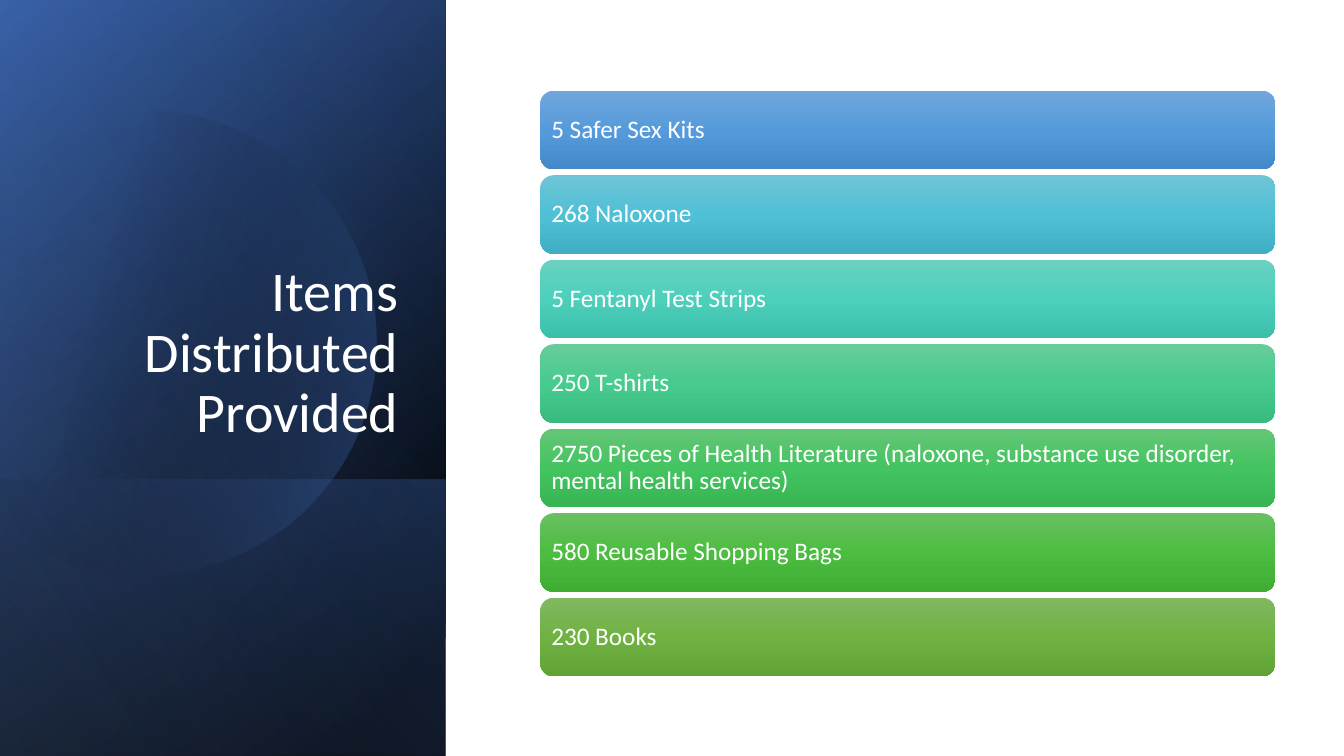
import math

import pptx
import pptx.dml.color
import pptx.enum.shapes
import pptx.enum.text
import pptx.oxml
import pptx.oxml.ns
import pptx.util

PX = 9144  # EMU per px, 100 px to the inch
ALIGN = pptx.enum.text.PP_ALIGN
ANCHOR = pptx.enum.text.MSO_ANCHOR
SHAPE = pptx.enum.shapes.MSO_SHAPE


class Theme:
    font = "Calibri"
    title_size, item_size = 40, 18
    text = "FFFFFF"
    # Gradient stops: position %, colour, opacity %
    panel_base = [(8, "000000", 100), (100, "2F5597", 100)]
    panel_tint = [(0, "000000", 0), (99, "4472C4", 46)]
    panel_foot = [(2, "4472C4", 29), (100, "000000", 30)]
    panel_disc = [(29, "000000", 0), (100, "4472C4", 43)]
    panel_sheen = [(0, "000000", 0), (99, "8FAADC", 11)]
    # Top, middle and bottom colour of each bar
    bars = [
        ("71A6DB", "559BDB", "448ACA"),
        ("6EC4D6", "50C0D6", "40AFC5"),
        ("6AD1C0", "4CD0BC", "3CC0AC"),
        ("67CC9A", "47CB8E", "39BB7F"),
        ("64C677", "44C460", "36B552"),
        ("69C062", "4CBD41", "3FAD34"),
        ("81B861", "6FB242", "62A336"),
    ]


TITLE = "Items Distributed Provided"
ITEMS = [
    "5 Safer Sex Kits",
    "268 Naloxone",
    "5 Fentanyl Test Strips",
    "250 T-shirts",
    "2750 Pieces of Health Literature (naloxone, substance use disorder, "
    "mental health services)",
    "580 Reusable Shopping Bags",
    "230 Books",
]


def emu(*lengths):
    return [round(length * PX) for length in lengths]


def style_gradient(sp, stops, angle):
    """Give a shape a linear gradient, clockwise angle, no line or shadow."""
    sp.shadow.inherit = False
    sp.line.fill.background()
    gs = "".join(
        f'<a:gs pos="{pos * 1000}"><a:srgbClr val="{color}">'
        f'<a:alpha val="{alpha * 1000}"/></a:srgbClr></a:gs>'
        for pos, color, alpha in stops
    )
    fill = pptx.oxml.parse_xml(
        f'<a:gradFill {pptx.oxml.ns.nsdecls("a")}><a:gsLst>{gs}</a:gsLst>'
        f'<a:lin ang="{angle * 60000}" scaled="0"/></a:gradFill>'
    )
    sp.fill.background()
    props = sp._element.spPr
    no_fill = props.find(pptx.oxml.ns.qn("a:noFill"))
    props.replace(no_fill, fill)


def write_text(sp, text, size, align=ALIGN.LEFT, anchor=ANCHOR.MIDDLE, inset=(10, 5)):
    tf = sp.text_frame
    tf.word_wrap = True
    tf.vertical_anchor = anchor
    tf.margin_left = tf.margin_right = emu(inset[0])[0]
    tf.margin_top = tf.margin_bottom = emu(inset[1])[0]
    p = tf.paragraphs[0]
    p.alignment = align
    p.line_spacing = 0.9
    r = p.add_run()
    r.text = text
    r.font.name = Theme.font
    r.font.size = pptx.util.Pt(size)
    r.font.color.rgb = pptx.dml.color.RGBColor.from_string(Theme.text)


def add_turned_rect(slide, x, y, w, h, stops, angle):
    """Cover the given box with a mirrored rectangle turned by 90 degrees."""
    left, top = x + (w - h) / 2, y + (h - w) / 2
    sp = slide.shapes.add_shape(SHAPE.RECTANGLE, *emu(left, top, h, w))
    sp.rotation = 90
    sp._element.spPr.find(pptx.oxml.ns.qn("a:xfrm")).set("flipH", "1")
    style_gradient(sp, stops, angle)


def add_disc(slide, x, cx, cy, radius):
    """Draw a disc cut off by the vertical edge at x."""
    reach = math.acos((x - cx) / radius)
    steps = 120
    angles = [reach * (2 * i / steps - 1) for i in range(steps + 1)]
    points = [emu(cx + radius * math.cos(a), cy + radius * math.sin(a)) for a in angles]
    builder = slide.shapes.build_freeform(*points[0])
    builder.add_line_segments(points[1:], close=True)
    style_gradient(builder.convert_to_shape(), Theme.panel_disc, 14)


def add_title_panel(slide, x, y, w, h):
    # Layered background
    foot = 274
    add_turned_rect(slide, x, y, w, h, Theme.panel_base, 50)
    add_turned_rect(slide, x, y, w, h, Theme.panel_tint, 30)
    add_turned_rect(slide, x, y + h - foot, w, foot, Theme.panel_foot, 130)
    add_disc(slide, x, x + 143, y + 340, 230)
    add_turned_rect(slide, x, y, w, h, Theme.panel_sheen, 120)

    # Title
    sp = slide.shapes.add_textbox(*emu(x + 64, y + 184, 341, 262))
    write_text(sp, TITLE, Theme.title_size, align=ALIGN.RIGHT, anchor=ANCHOR.BOTTOM)


def add_item_bars(slide, x, y, w, h):
    bar_h = 78
    pitch = (h - bar_h) / (len(ITEMS) - 1)
    for i, (item, colors) in enumerate(zip(ITEMS, Theme.bars)):
        sp = slide.shapes.add_shape(
            SHAPE.ROUNDED_RECTANGLE, *emu(x, y + i * pitch, w, bar_h)
        )
        stops = [(pos, color, 100) for pos, color in zip((0, 50, 100), colors)]
        style_gradient(sp, stops, 90)
        # The preset's own text area already adds about 4 px
        write_text(sp, item, Theme.item_size, inset=(7, 7))


def main():
    prs = pptx.Presentation()
    prs.slide_width, prs.slide_height = emu(1333, 750)
    slide = prs.slides.add_slide(prs.slide_layouts[6])
    add_title_panel(slide, 0, 0, 442, 750)
    add_item_bars(slide, 536, 90, 729, 581)
    prs.save("out.pptx")


if __name__ == "__main__":
    main()
